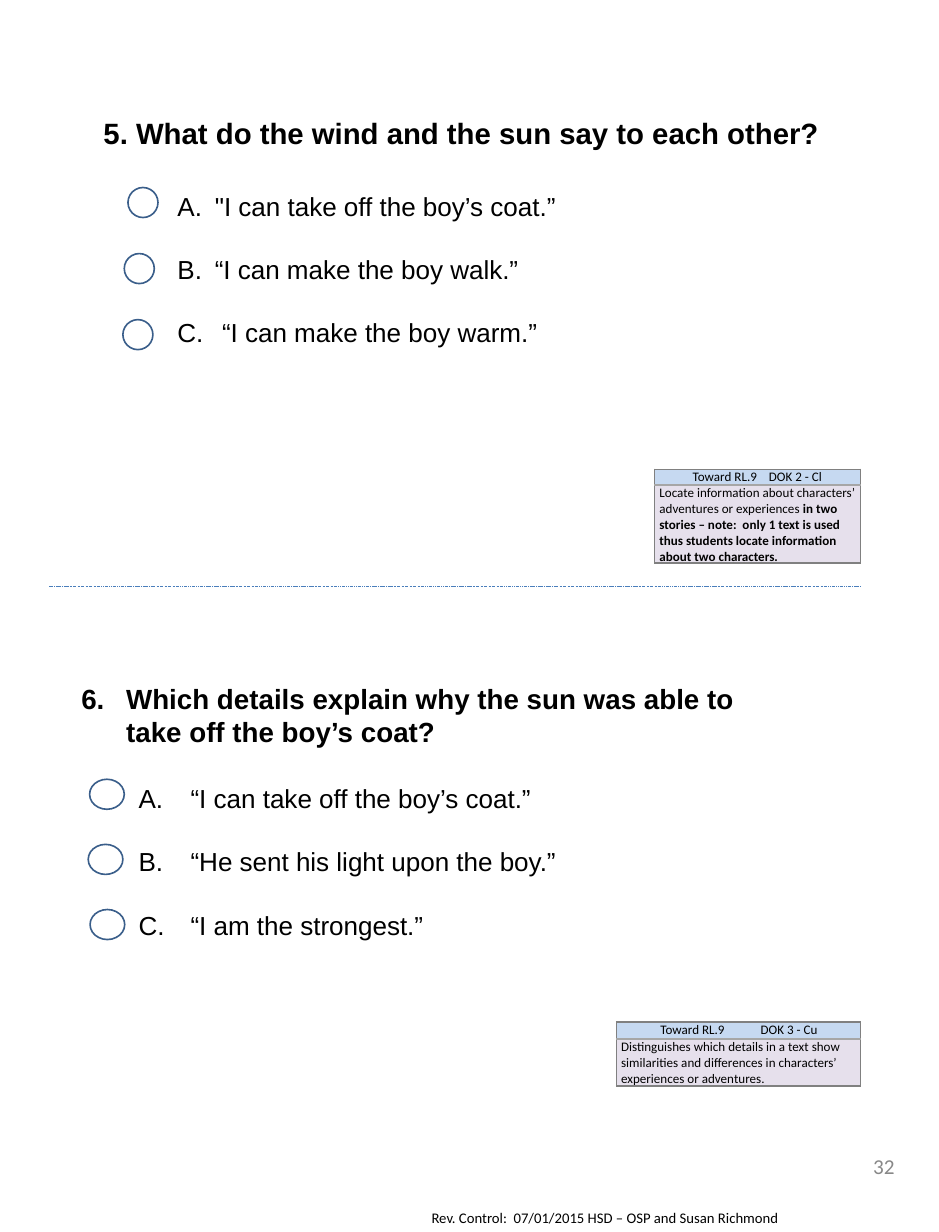
from dataclasses import dataclass
from typing import Optional

from lxml.etree import SubElement
from pptx import Presentation
from pptx.dml.color import RGBColor
from pptx.enum.dml import MSO_LINE
from pptx.enum.shapes import MSO_CONNECTOR, MSO_SHAPE
from pptx.enum.text import MSO_ANCHOR, PP_ALIGN
from pptx.oxml.ns import qn
from pptx.util import Cm, Pt

COLORS = {
    "text": "000000", "page": "888888", "paper": "FFFFFF", "bubble": "3A5E8A",
    "divider": "4A7EBB", "header": "C6D9F1", "body": "E6E0EC",
    "edge": "808080", "seam": "A6A6A6",
}


@dataclass
class Question:
    prompt: str
    answers: list[str]
    box: tuple[float, float, float, float]
    size: float
    gap: float                    # points between prompt and first answer
    indent: tuple[float, float]   # left margin and hanging depth of answers
    bubble_lefts: list[float]
    bubble_top: float
    bubble_step: float
    bubble_width: float
    number: Optional[int] = None  # automatic number of the prompt


@dataclass
class Standard:
    header: str
    body: list[tuple[str, bool]]
    left: float
    top: float
    width: float
    heights: tuple[float, float]
    header_inset: float
    tab: float


QUESTIONS = [
    Question("5. What do the wind and the sun say to each other?",
             ["\"I can take off the boy’s coat.”", "“I can make the boy walk.”",
              " “I can make the boy warm.”"],
             (2.11, 2.36, 16.08, 6.68), 18, 24.5, (2.41, 0.81),
             [2.77, 2.69, 2.66], 4.06, 1.43, 0.65),
    Question("Which details explain why the sun was able to take off the boy’s coat?",
             [" “I can take off the boy’s coat.”", " “He sent his light upon the boy.”",
              " “I am the strongest.”"],
             (1.63, 14.62, 15.09, 11.35), 17, 21.5, (2.21, 0.97),
             [1.94, 1.91, 1.95], 16.87, 1.41, 0.75, number=6),
]

STANDARDS = [
    Standard("Toward RL.9\tDOK 2 - Cl",
             [("Locate information about characters’ adventures or experiences ", False),
              ("in two stories – note:  only 1 text is used thus students locate "
               "information about two characters.", True)],
             14.17, 10.16, 4.45, (0.34, 1.69), 0.82, 1.65),
    Standard("Toward RL.9\tDOK 3 - Cu",
             [("Distinguishes which details in a text show similarities and differences "
               "in characters’ experiences or adventures.", False)],
             13.34, 22.12, 5.28, (0.37, 1.02), 0.95, 2.17),
]


def rgb(name: str) -> RGBColor:
    return RGBColor.from_string(COLORS[name])


def write(frame, text, *, size, font="Calibri", color="text", bold=False,
          align=PP_ALIGN.LEFT, before=0, indent=None, numbering=None, start=1, tab=None):
    """Add a paragraph; text is a string or a list of (string, bold) runs."""
    paragraph = frame.paragraphs[0]
    if paragraph.runs:
        paragraph = frame.add_paragraph()
    paragraph.alignment = align
    paragraph.space_before = Pt(before)
    for words, is_bold in [(text, bold)] if isinstance(text, str) else text:
        run = paragraph.add_run()
        run.text = words
        run.font.size, run.font.name, run.font.bold = Pt(size), font, is_bold
        run.font.color.rgb = rgb(color)
    properties = paragraph._p.get_or_add_pPr()
    if indent:
        margin, hanging = indent
        properties.set("marL", str(Cm(margin)))
        properties.set("indent", str(-Cm(hanging)))
    if numbering:
        SubElement(properties, qn("a:buFont"), typeface="+mj-lt")
        SubElement(properties, qn("a:buAutoNum"), type=numbering, startAt=str(start))
    if tab:
        stops = SubElement(properties, qn("a:tabLst"))
        SubElement(stops, qn("a:tab"), pos=str(Cm(tab)), algn="l")


def add_frame(slide, box, inset=0.13, vertical=0.13, anchor=MSO_ANCHOR.TOP):
    frame = slide.shapes.add_textbox(*map(Cm, box)).text_frame
    frame.word_wrap = True
    frame.vertical_anchor = anchor
    frame.margin_left = frame.margin_right = Cm(inset)
    frame.margin_top = frame.margin_bottom = Cm(vertical)
    return frame


def draw_question(slide, question: Question) -> None:
    frame = add_frame(slide, question.box)
    prompt_list = {}
    if question.number:
        prompt_list = dict(indent=(0.97, 0.97), numbering="arabicPeriod",
                           start=question.number)
    write(frame, question.prompt, size=question.size, font="Arial", bold=True, **prompt_list)
    for row, (answer, left) in enumerate(zip(question.answers, question.bubble_lefts)):
        write(frame, answer, size=16, font="Arial", before=19.5 if row else question.gap,
              indent=question.indent, numbering="alphaUcPeriod")
        top = question.bubble_top + row * question.bubble_step
        bubble = slide.shapes.add_shape(MSO_SHAPE.OVAL, Cm(left), Cm(top),
                                        Cm(question.bubble_width), Cm(0.65))
        bubble.shadow.inherit = False
        bubble.fill.solid()
        bubble.fill.fore_color.rgb = rgb("paper")
        bubble.line.color.rgb = rgb("bubble")
        bubble.line.width = Pt(1)


def style_cell(cell, fill: str, top: str, bottom: str, inset: float) -> None:
    cell.margin_left, cell.margin_right = Cm(inset), Cm(0.1)
    cell.margin_top = cell.margin_bottom = 0
    properties = cell._tc.get_or_add_tcPr()
    for side, color in (("L", "edge"), ("R", "edge"), ("T", top), ("B", bottom)):
        border = SubElement(properties, qn(f"a:ln{side}"), w=str(Pt(1)))
        SubElement(SubElement(border, qn("a:solidFill")), qn("a:srgbClr"), val=COLORS[color])
    cell.fill.solid()
    cell.fill.fore_color.rgb = rgb(fill)


def draw_standard(slide, standard: Standard) -> None:
    table = slide.shapes.add_table(2, 1, Cm(standard.left), Cm(standard.top),
                                   Cm(standard.width), Cm(sum(standard.heights))).table
    for row, height in zip(table.rows, standard.heights):
        row.height = Cm(height)
    header, body = table.cell(0, 0), table.cell(1, 0)
    style_cell(header, "header", "edge", "seam", standard.header_inset)
    style_cell(body, "body", "seam", "edge", 0.1)
    header.vertical_anchor = MSO_ANCHOR.MIDDLE
    write(header.text_frame, standard.header, size=8, tab=standard.tab)
    write(body.text_frame, standard.body, size=8)


def draw_divider(slide) -> None:
    divider = slide.shapes.add_connector(MSO_CONNECTOR.STRAIGHT, Cm(1.07), Cm(12.7),
                                         Cm(18.62), Cm(12.7))
    divider.line.color.rgb = rgb("divider")
    divider.line.width = Pt(0.25)
    divider.line.dash_style = MSO_LINE.DASH_DOT_DOT
    SubElement(divider._element.spPr, qn("a:effectLst"))


def main() -> None:
    deck = Presentation()
    deck.slide_width, deck.slide_height = Cm(20.32), Cm(26.67)
    slide = deck.slides.add_slide(deck.slide_layouts[6])

    # Footer and page number
    write(add_frame(slide, (9.09, 26.04, 10.16, 0.64), 0.25),
          "Rev. Control:  07/01/2015 HSD – OSP and Susan Richmond", size=9)
    write(add_frame(slide, (17.15, 24.84, 2.21, 0.79), 0, 0, MSO_ANCHOR.MIDDLE),
          "32", size=13, color="page", align=PP_ALIGN.RIGHT)

    # Two questions, parted by a line, each with its standard
    draw_divider(slide)
    for question in QUESTIONS:
        draw_question(slide, question)
    for standard in STANDARDS:
        draw_standard(slide, standard)

    deck.save("out.pptx")


if __name__ == "__main__":
    main()
